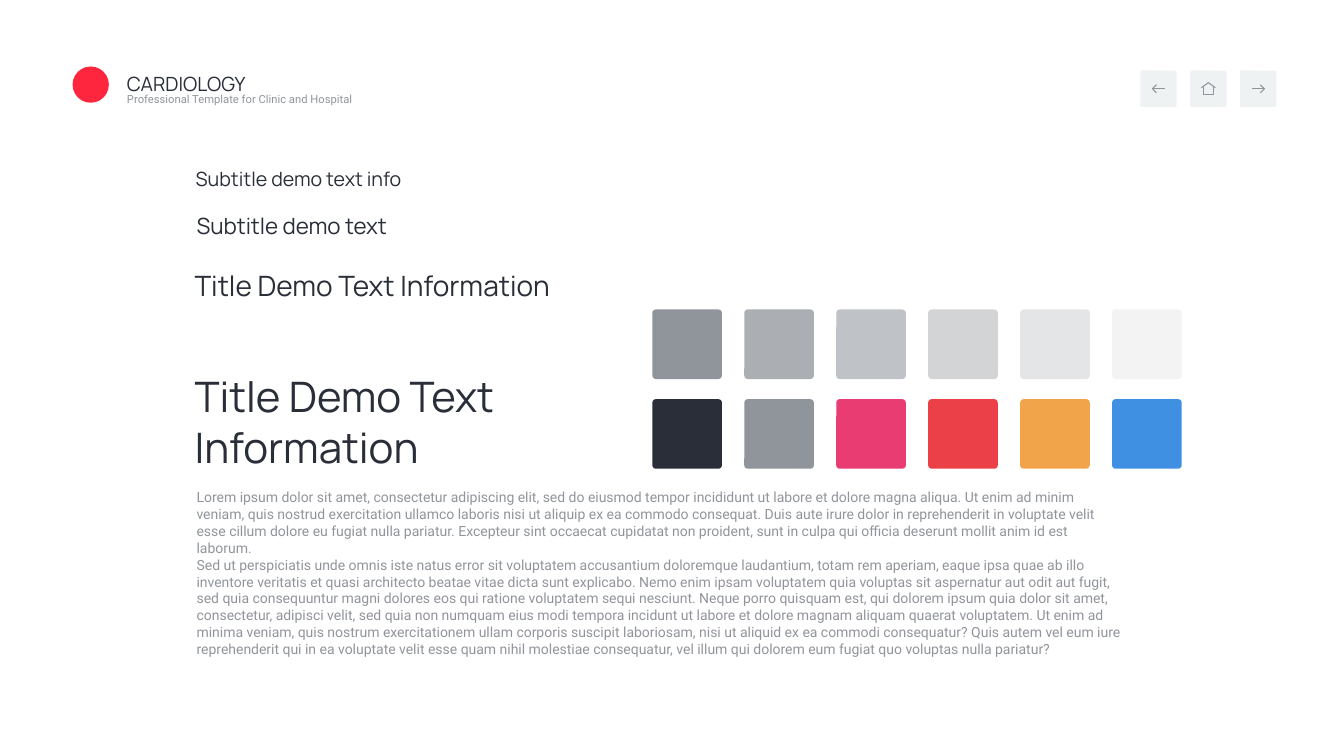
import pptx
import pptx.dml.color
import pptx.enum.shapes
import pptx.enum.text
import pptx.util

Inches = pptx.util.Inches
Shapes = pptx.enum.shapes.MSO_SHAPE
Anchor = pptx.enum.text.MSO_ANCHOR


def color(value):
    """Turn a hex string into a colour."""
    return pptx.dml.color.RGBColor.from_string(value)


class StylePage:
    """Hold the style and the current slide, and draw its elements."""

    INK = "292E38"
    MUTED = "91959B"
    ICON = "90959C"
    BUTTON = "EFF2F3"
    HEADING_FONT = "Manrope"
    BODY_FONT = "Roboto"

    def __init__(self, deck):
        self.page = deck.slides.add_slide(deck.slide_layouts[6])

    def plain(self, kind, left, top, width, height, fill):
        shape = self.page.shapes.add_shape(
            kind, Inches(left), Inches(top), Inches(width), Inches(height))
        shape.shadow.inherit = False
        shape.fill.solid()
        shape.fill.fore_color.rgb = color(fill)
        shape.line.fill.background()
        return shape

    def tile(self, left, top, size, fill):
        tile = self.plain(Shapes.ROUNDED_RECTANGLE, left, top, size, size, fill)
        tile.adjustments[0] = 0.05

    def text(self, place, paragraphs, size, font, ink, inset=0.03, anchor=Anchor.TOP):
        box = self.page.shapes.add_textbox(*(Inches(length) for length in place))
        frame = box.text_frame
        frame.word_wrap = True
        frame.vertical_anchor = anchor
        frame.margin_left = frame.margin_right = Inches(inset)
        frame.margin_top = frame.margin_bottom = Inches(inset)
        frame.text = "\n".join(paragraphs)
        for para in frame.paragraphs:
            para.font.size = pptx.util.Pt(size)
            para.font.name = font
            para.font.color.rgb = color(ink)

    def heading(self, place, words, size, inset=0.03):
        self.text(place, [words], size, self.HEADING_FONT, self.INK, inset)

    def body(self, place, paragraphs, size, inset=0.03):
        self.text(place, paragraphs, size, self.BODY_FONT, self.MUTED, inset, Anchor.MIDDLE)

    def icon(self, center_x, center_y, strokes):
        placed = [[(Inches(center_x + x), Inches(center_y + y)) for x, y in stroke]
                  for stroke in strokes]
        builder = self.page.shapes.build_freeform(*placed[0][0])
        for number, stroke in enumerate(placed):
            if number:
                builder.move_to(*stroke[0])
            builder.add_line_segments(stroke[1:], close=False)
        outline = builder.convert_to_shape()
        outline.shadow.inherit = False
        outline.fill.background()
        outline.line.color.rgb = color(self.ICON)
        outline.line.width = pptx.util.Pt(0.75)

    def button(self, left, top, strokes):
        self.tile(left, top, 0.36, self.BUTTON)
        self.icon(left + 0.18, top + 0.18, strokes)


RIGHT_ARROW = [
    [(-0.06, 0), (0.06, 0)],
    [(0.02, -0.04), (0.06, 0), (0.02, 0.04)],
]
LEFT_ARROW = [[(-x, y) for x, y in stroke] for stroke in RIGHT_ARROW]
HOUSE = [
    [(-0.07, -0.01), (0, -0.06), (0.07, -0.01)],
    [(-0.05, -0.02), (-0.05, 0.06), (0.05, 0.06), (0.05, -0.02)],
]

HEADINGS = [
    ((1.9, 3.65, 4.43, 1.07), "Title Demo Text Information", 30),
    ((1.9, 2.63, 4.43, 0.39), "Title Demo Text Information", 20),
    ((1.92, 2.07, 2.74, 0.33), "Subtitle demo text", 16),
    ((1.91, 1.63, 2.19, 0.29), "Subtitle demo text info", 14),
]

LOREM_SENTENCES = [
    "Lorem ipsum dolor sit amet, consectetur adipiscing elit, sed do eiusmod tempor "
    "incididunt ut labore et dolore magna aliqua.",
    "Ut enim ad minim veniam, quis nostrud exercitation ullamco laboris nisi ut aliquip "
    "ex ea commodo consequat.",
    "Duis aute irure dolor in reprehenderit in voluptate velit esse cillum dolore eu "
    "fugiat nulla pariatur.",
    "Excepteur sint occaecat cupidatat non proident, sunt in culpa qui officia deserunt "
    "mollit anim id est laborum.",
]
PERSPICIATIS_SENTENCES = [
    "Sed ut perspiciatis unde omnis iste natus error sit voluptatem accusantium doloremque "
    "laudantium, totam rem aperiam, eaque ipsa quae ab illo inventore veritatis et quasi "
    "architecto beatae vitae dicta sunt explicabo.",
    "Nemo enim ipsam voluptatem quia voluptas sit aspernatur aut odit aut fugit, sed quia "
    "consequuntur magni dolores eos qui ratione voluptatem sequi nesciunt.",
    "Neque porro quisquam est, qui dolorem ipsum quia dolor sit amet, consectetur, adipisci "
    "velit, sed quia non numquam eius modi tempora incidunt ut labore et dolore magnam "
    "aliquam quaerat voluptatem.",
    "Ut enim ad minima veniam, quis nostrum exercitationem ullam corporis suscipit "
    "laboriosam, nisi ut aliquid ex ea commodi consequatur?",
    "Quis autem vel eum iure reprehenderit qui in ea voluptate velit esse quam nihil "
    "molestiae consequatur, vel illum qui dolorem eum fugiat quo voluptas nulla pariatur?",
]

SWATCHES = [
    ["8F959B", "ABAEB3", "BFC2C6", "D3D4D6", "E3E5E7", "F3F3F4"],
    ["2A2E38", "90959B", "E93C73", "EB4047", "F2A44A", "3F8FE2"],
]


def main():
    """Build the style page and save it."""
    deck = pptx.Presentation()
    deck.slide_width = Inches(13.33)
    deck.slide_height = Inches(7.5)
    sheet = StylePage(deck)

    for column, strokes in enumerate([LEFT_ARROW, HOUSE, RIGHT_ARROW]):
        sheet.button(11.31 + 0.495 * column, 0.7, strokes)

    sheet.plain(Shapes.OVAL, 0.72, 0.66, 0.36, 0.36, "FE253E")
    sheet.heading((1.2, 0.65, 1.56, 0.35), "CARDIOLOGY", 14, inset=0.06)
    sheet.body((1.2, 0.86, 3.47, 0.25),
               ["Professional Template for Clinic and Hospital"], 8, inset=0.06)

    for place, words, size in HEADINGS:
        sheet.heading(place, words, size)
    paragraphs = [" ".join(part) for part in (LOREM_SENTENCES, PERSPICIATIS_SENTENCES)]
    sheet.body((1.92, 4.9, 9.22, 1.57), paragraphs, 10)

    for row, fills in enumerate(SWATCHES):
        for column, fill in enumerate(fills):
            sheet.tile(6.47 + 0.912 * column, 3.07 + 0.89 * row, 0.69, fill)

    deck.save("out.pptx")


if __name__ == "__main__":
    main()
